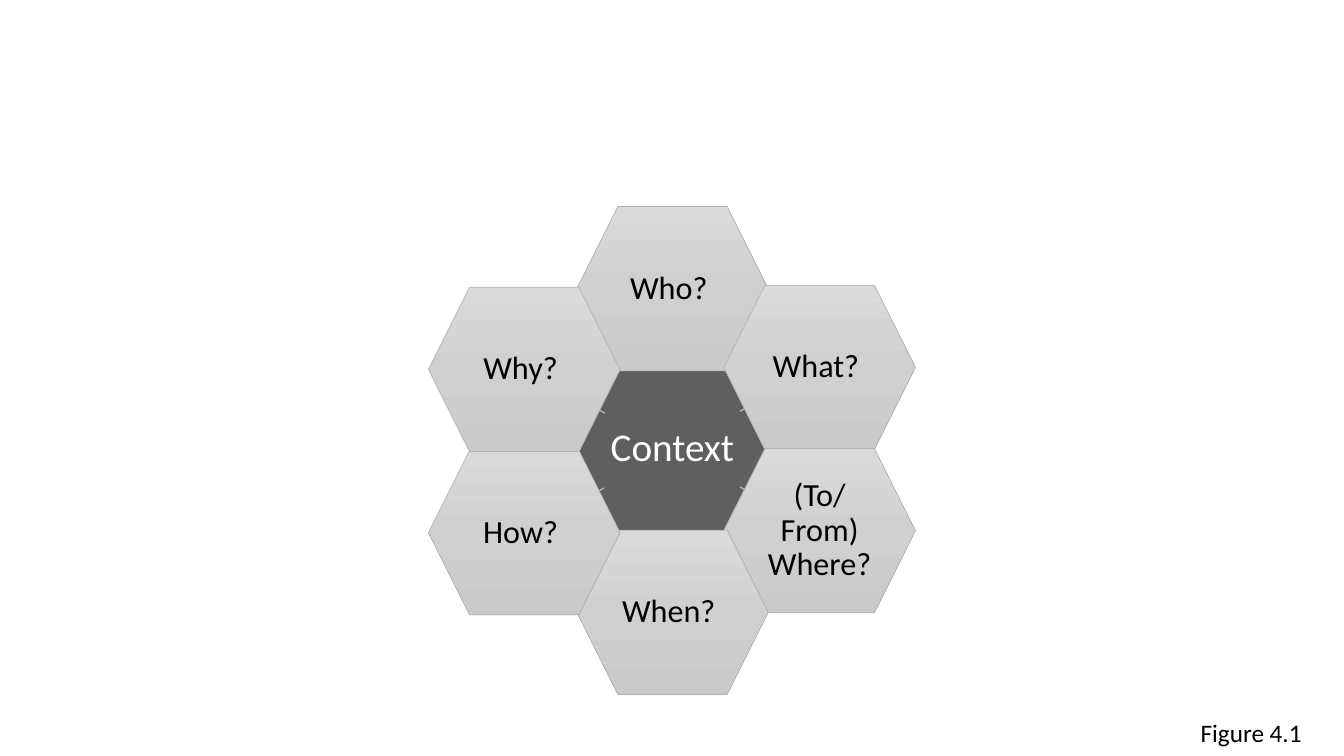
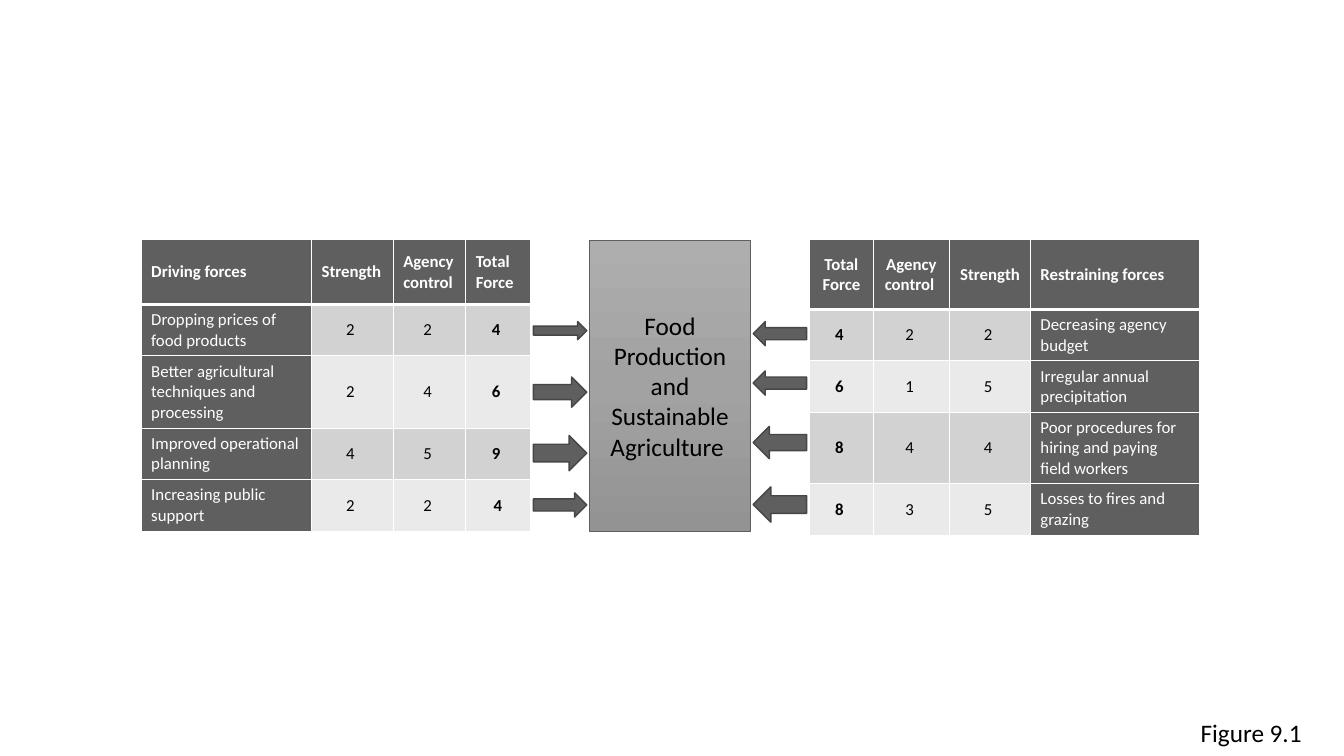
from copy import deepcopy

from lxml.etree import SubElement
from pptx import Presentation
from pptx.dml.color import RGBColor
from pptx.enum.shapes import MSO_CONNECTOR as Connector, MSO_SHAPE as Shape
from pptx.enum.text import MSO_ANCHOR as Anchor, MSO_AUTO_SIZE as AutoSize, PP_ALIGN as Align
from pptx.oxml.ns import qn
from pptx.util import Inches, Pt

COLORS = {
    "white": "FFFFFF",
    "black": "000000",
    "dark": "5F5F5F",
    "arrow_edge": "464646",
    "tick": "B1B1B1",
    "petal_edge": "B2B2B2",
    "band_odd": "D2D2D2",
    "band_even": "EAEAEA",
}
PETAL_GRADIENT = ("DADADA", "D0D0D0", "CACACA")
TOPIC_GRADIENT = ("AEAEAE", "A2A2A2", "939393")


def color(name):
    return RGBColor.from_string(COLORS[name])


class Deck:
    font_name = "Calibri"

    def __init__(self):
        self.presentation = Presentation()
        self.presentation.slide_width = Inches(13.33)
        self.presentation.slide_height = Inches(7.5)
        self.slide = None

    def new_slide(self, figure):
        self.slide = self.presentation.slides.add_slide(self.presentation.slide_layouts[6])
        box = self.slide.shapes.add_textbox(Inches(11.81), Inches(7.07), Inches(1.52), Inches(0.4))
        box.text_frame.word_wrap = True
        box.text_frame.auto_size = AutoSize.SHAPE_TO_FIT_TEXT
        self.set_text(box.text_frame, figure, 18, align=Align.LEFT)

    def set_text(self, text_frame, text, size, name="black", align=Align.CENTER, bold=False):
        text_frame.text = text
        paragraph = text_frame.paragraphs[0]
        paragraph.alignment = align
        for run in paragraph.runs:
            run.font.name = self.font_name
            run.font.size = Pt(size)
            run.font.bold = bold
            run.font.color.rgb = color(name)
        return paragraph

    def shape(self, kind, left, top, width, height, fill, edge, edge_width):
        shape = self.slide.shapes.add_shape(
            kind, Inches(left), Inches(top), Inches(width), Inches(height))
        shape.shadow.inherit = False
        if isinstance(fill, tuple):
            self.gradient(shape, fill)
        else:
            shape.fill.solid()
            shape.fill.fore_color.rgb = color(fill)
        shape.line.color.rgb = color(edge)
        shape.line.width = Pt(edge_width)
        shape.text_frame.word_wrap = True
        shape.text_frame.vertical_anchor = Anchor.MIDDLE
        return shape

    def gradient(self, shape, shades):
        shape.fill.gradient()
        shape.fill.gradient_angle = 270
        stop_list = shape._element.spPr.find(".//" + qn("a:gsLst"))
        stop_list.append(deepcopy(stop_list[0]))
        for index, (stop, shade) in enumerate(zip(shape.fill.gradient_stops, shades)):
            stop.position = index / 2
            stop.color.rgb = RGBColor.from_string(shade)

    def hexagon(self, left, top, text, size, name, fill, edge, edge_width):
        shape = self.shape(Shape.HEXAGON, left, top, 1.9, 1.63, fill, edge, edge_width)
        frame = shape.text_frame
        frame.margin_left = frame.margin_right = Inches(0.02)
        frame.margin_top = frame.margin_bottom = Inches(0.02)
        self.set_text(frame, text, size, name).line_spacing = 0.9

    def tick(self, *ends):
        line = self.slide.shapes.add_connector(Connector.STRAIGHT, *map(Inches, ends))
        line.line.color.rgb = color("tick")
        line.line.width = Pt(1)
        SubElement(line._element.spPr, qn("a:effectLst"))

    def arrow(self, left, top, height, rotation):
        shape = self.shape(Shape.RIGHT_ARROW, left, top, 0.53, height, "dark", "arrow_edge", 1)
        shape.rotation = rotation

    def borders(self, cell, bottom):
        properties = cell._tc.get_or_add_tcPr()
        for side, points in (("L", 1), ("R", 1), ("T", 1), ("B", bottom)):
            line = SubElement(properties, qn("a:ln" + side), w=str(Pt(points)))
            fill = SubElement(line, qn("a:solidFill"))
            SubElement(fill, qn("a:srgbClr"), val=COLORS["white"])

    def force_table(self, left, widths, heights, rows, label_column, total_column, header_align):
        table = self.slide.shapes.add_table(
            len(rows), len(widths), Inches(left), Inches(2.38),
            Inches(sum(widths)), Inches(sum(heights))).table
        table.first_row = table.horz_banding = False
        for column, width in zip(table.columns, widths):
            column.width = Inches(width)
        for row, height in zip(table.rows, heights):
            row.height = Inches(height)
        for row_index, row in enumerate(rows):
            header = row_index == 0
            band = "band_odd" if row_index % 2 else "band_even"
            for column_index, text in enumerate(row):
                label = column_index == label_column
                dark = header or label
                align = Align.LEFT if label else header_align if header else Align.CENTER
                cell = table.cell(row_index, column_index)
                cell.vertical_anchor = Anchor.MIDDLE
                self.borders(cell, 3 if header else 1)
                cell.fill.solid()
                cell.fill.fore_color.rgb = color("dark" if dark else band)
                self.set_text(cell.text_frame, text, 12, "white" if dark else "black",
                              align, header or column_index == total_column)


def build_context(deck):
    deck.new_slide("Figure 4.1")
    deck.hexagon(5.72, 3.64, "Context", 28, "white", "dark", "white", 1.5)
    for ends in ((7.46, 4.01, 7.34, 4.08), (7.46, 4.9, 7.34, 4.83),
                 (5.88, 4.91, 5.99, 4.84), (5.86, 4.02, 6, 4.1)):
        deck.tick(*ends)
    for left, top, question in (
        (5.72, 2.05, "Who? "),
        (7.18, 2.83, "What? "),
        (7.18, 4.45, "(To/ From) Where?"),
        (5.72, 5.26, "When? "),
        (4.25, 4.47, "How? "),
        (4.25, 2.85, "Why? "),
    ):
        deck.hexagon(left, top, question, 23, "black", PETAL_GRADIENT, "petal_edge", 0.5)


def build_force_field(deck):
    deck.new_slide("Figure 9.1")
    driving = (
        ("Driving forces", "Strength", "Agency control", "Total Force"),
        ("Dropping prices of food products", "2 ", "2 ", "4 "),
        ("Better agricultural techniques and processing", "2 ", "4 ", "6 "),
        ("Improved operational planning", "4 ", "5 ", "9 "),
        ("Increasing public support", "2 ", "2 ", "4"),
    )
    restraining = (
        ("Total Force", "Agency control ", "Strength", "Restraining forces"),
        ("4 ", "2 ", "2 ", "Decreasing agency budget"),
        ("6 ", "1 ", "5 ", "Irregular annual precipitation"),
        ("8 ", "4 ", "4 ", "Poor procedures for hiring and paying field workers"),
        ("8 ", "3 ", "5 ", "Losses to fires and grazing"),
    )
    deck.force_table(1.4, (1.69, 0.81, 0.72, 0.64), (0.64, 0.51, 0.72, 0.51, 0.51),
                     driving, 0, 3, Align.LEFT)
    deck.force_table(8.03, (0.63, 0.76, 0.8, 1.68), (0.69, 0.51, 0.51, 0.71, 0.51),
                     restraining, 3, 0, Align.CENTER)
    topic = deck.shape(Shape.RECTANGLE, 5.85, 2.38, 1.59, 2.89, TOPIC_GRADIENT, "dark", 0.5)
    deck.set_text(topic.text_frame, "Food Production and Sustainable Agriculture ", 18)
    for left, rotation, arrows in (
        (5.29, 0, ((3.19, 0.18), (3.74, 0.3), (4.32, 0.35), (4.89, 0.24))),
        (7.47, 180, ((3.19, 0.24), (3.68, 0.24), (4.23, 0.32), (4.83, 0.35))),
    ):
        for top, height in arrows:
            deck.arrow(left, top, height, rotation)


def main():
    deck = Deck()
    build_context(deck)
    build_force_field(deck)
    deck.presentation.save("out.pptx")


if __name__ == "__main__":
    main()
